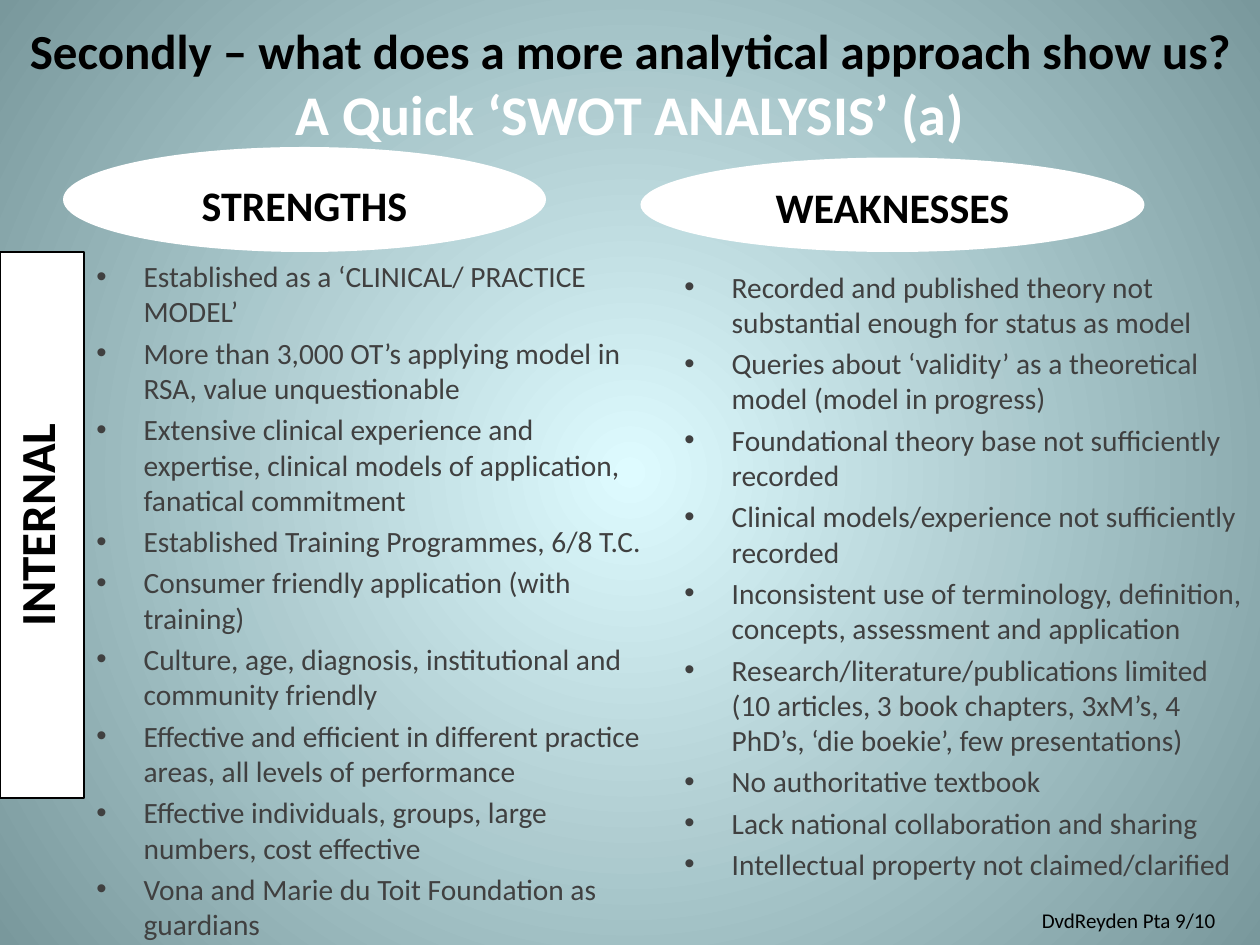
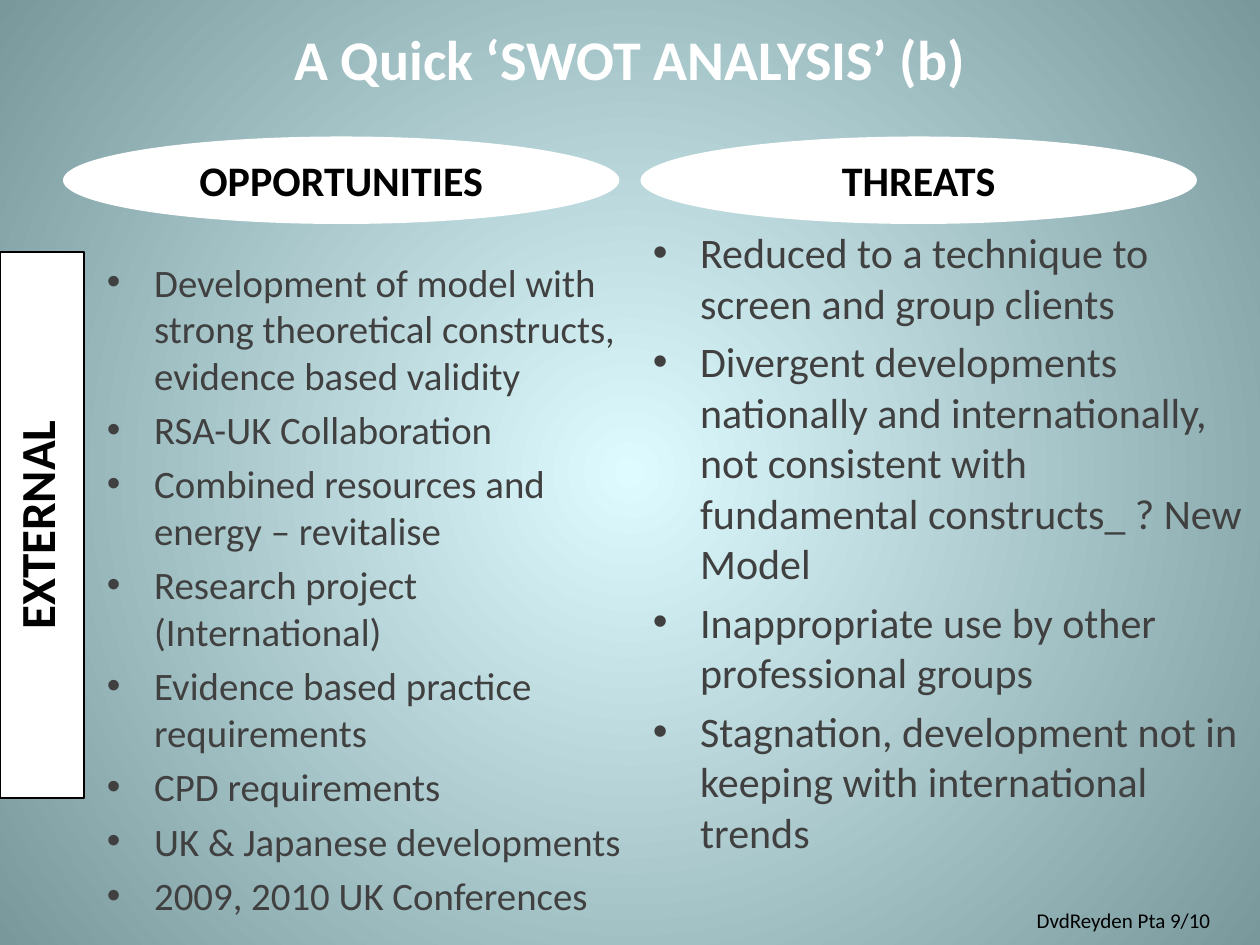
"""Build two SWOT analysis slides: internal and external factors."""
from dataclasses import dataclass

from pptx import Presentation
from pptx.dml.color import RGBColor
from pptx.enum.shapes import MSO_SHAPE
from pptx.enum.text import MSO_ANCHOR, PP_ALIGN
from pptx.oxml import parse_xml
from pptx.oxml.ns import nsdecls
from pptx.util import Pt

COLORS = {
    "glow": "DEFBFF",
    "edge": "79989C",
    "white": "FFFFFF",
    "black": "000000",
    "body": "404040",
}
FONT = "Calibri"
INDENT = 27


@dataclass
class Box:
    left: float
    top: float
    width: float
    height: float

    def lengths(self) -> tuple:
        return Pt(self.left), Pt(self.top), Pt(self.width), Pt(self.height)


@dataclass
class Line:
    text: str
    size: float
    color: str


@dataclass
class Factor:
    heading: str
    oval: Box
    box: Box
    size: float
    points: list[str]


@dataclass
class SwotSlide:
    title: list[Line]
    title_box: Box
    side_label: str
    footer_box: Box
    factors: list[Factor]


SIDE_BOX = Box(0, 144, 48, 312)
FOOTER = Line("DvdReyden Pta 9/10", 12, "black")

SLIDES = [
    SwotSlide(
        [Line("Secondly – what does a more analytical approach show us?", 28, "black"),
         Line("A Quick ‘SWOT ANALYSIS’ (a)", 32, "white")],
        Box(0, 0, 720, 96),
        "INTERNAL",
        Box(570, 511, 150, 29),
        [
            Factor("STRENGTHS", Box(36, 84, 276, 60), Box(48, 144, 330, 396), 16.8, [
                "Established as a ‘CLINICAL/ PRACTICE MODEL’",
                "More than 3,000 OT’s applying model in RSA, value unquestionable",
                "Extensive clinical experience and expertise, clinical models of "
                "application, fanatical commitment",
                "Established Training Programmes, 6/8 T.C.",
                "Consumer friendly application (with training)",
                "Culture, age, diagnosis, institutional and community friendly",
                "Effective and efficient in different practice areas, all levels of performance",
                "Effective individuals, groups, large numbers, cost effective",
                "Vona and Marie du Toit Foundation as guardians",
            ]),
            Factor("WEAKNESSES", Box(366, 90, 288, 54), Box(384, 150, 336, 390), 16.8, [
                "Recorded and published theory not substantial enough for status as model",
                "Queries about ‘validity’ as a theoretical model (model in progress)",
                "Foundational theory base not sufficiently recorded",
                "Clinical models/experience not sufficiently recorded",
                "Inconsistent use of terminology, definition, concepts, assessment and application",
                "Research/literature/publications limited (10 articles, 3 book chapters, "
                "3xM’s, 4 PhD’s, ‘die boekie’, few presentations)",
                "No authoritative textbook",
                "Lack national collaboration and sharing",
                "Intellectual property not claimed/clarified",
            ]),
        ],
    ),
    SwotSlide(
        [Line("A Quick ‘SWOT ANALYSIS’ (b)", 32, "white")],
        Box(36, 0, 648, 66),
        "EXTERNAL",
        Box(564, 511, 156, 29),
        [
            Factor("OPPORTUNITIES", Box(36, 78, 318, 50), Box(54, 144, 312, 384), 22.2, [
                "Development of model with strong theoretical constructs, evidence based validity",
                "RSA-UK Collaboration",
                "Combined resources and energy – revitalise",
                "Research project (International)",
                "Evidence based practice requirements",
                "CPD requirements",
                "UK & Japanese developments",
                "2009, 2010 UK Conferences",
            ]),
            Factor("THREATS", Box(366, 78, 318, 50), Box(366, 126, 354, 402), 24, [
                "Reduced to a technique to screen and group clients",
                "Divergent developments nationally and internationally, not consistent "
                "with fundamental constructs_ ? New Model",
                "Inappropriate use by other professional groups",
                "Stagnation, development not in keeping with international trends",
            ]),
        ],
    ),
]


def set_background(s) -> None:
    """Give the slide a radial gradient that glows in the centre."""
    s.background.fill.solid()
    bg_pr = s.background.fill._xPr
    grad = parse_xml(
        f'<a:gradFill {nsdecls("a")} rotWithShape="1"><a:gsLst>'
        f'<a:gs pos="0"><a:srgbClr val="{COLORS["glow"]}"/></a:gs>'
        f'<a:gs pos="100000"><a:srgbClr val="{COLORS["edge"]}"/></a:gs></a:gsLst>'
        '<a:path path="circle"><a:fillToRect l="50000" t="50000" r="50000" b="50000"/>'
        '</a:path></a:gradFill>')
    bg_pr.replace(bg_pr[0], grad)


def format_run(r, size: float, color: str, bold: bool) -> None:
    """Set the font of one run."""
    r.font.name = FONT
    r.font.size = Pt(size)
    r.font.bold = bold
    r.font.color.rgb = RGBColor.from_string(COLORS[color])


def write_centered(sp, lines: list[Line], anchor: MSO_ANCHOR, bold: bool = True) -> None:
    """Write centred lines into a shape as one paragraph."""
    tf = sp.text_frame
    tf.word_wrap = True
    tf.vertical_anchor = anchor
    p = tf.paragraphs[0]
    p.text = "\v".join(line.text for line in lines)
    p.alignment = PP_ALIGN.CENTER
    for r, line in zip(p.runs, lines):
        format_run(r, line.size, line.color, bold)


def add_text(s, box: Box, lines: list[Line], bold: bool = True) -> None:
    """Add a text box of centred lines."""
    write_centered(s.shapes.add_textbox(*box.lengths()), lines, MSO_ANCHOR.MIDDLE, bold)


def add_panel(s, kind: MSO_SHAPE, box: Box, line: Line, anchor: MSO_ANCHOR):
    """Add a white shape with a bold label and no outline."""
    sp = s.shapes.add_shape(kind, *box.lengths())
    sp.shadow.inherit = False
    sp.fill.solid()
    sp.fill.fore_color.rgb = RGBColor.from_string(COLORS["white"])
    sp.line.fill.background()
    write_centered(sp, [line], anchor)
    return sp


def add_side_label(s, text: str) -> None:
    """Add the outlined label that reads upwards along the left edge."""
    sp = add_panel(s, MSO_SHAPE.RECTANGLE, SIDE_BOX, Line(text, 28, "black"), MSO_ANCHOR.TOP)
    sp.line.color.rgb = RGBColor.from_string(COLORS["black"])
    sp.line.width = Pt(0.75)
    sp.text_frame._txBody.bodyPr.set("vert", "vert270")


def add_bullets(s, factor: Factor) -> None:
    """Add the bulleted points of one factor."""
    tf = s.shapes.add_textbox(*factor.box.lengths()).text_frame
    tf.word_wrap = True
    tf.text = "\n".join(factor.points)
    for p in tf.paragraphs:
        p.space_before = Pt(round(factor.size * 0.2, 1))
        p_pr = p._p.get_or_add_pPr()
        p_pr.set("marL", str(Pt(INDENT)))
        p_pr.set("indent", str(-Pt(INDENT)))
        p_pr.append(parse_xml(f'<a:buFont {nsdecls("a")} typeface="Arial"/>'))
        p_pr.append(parse_xml(f'<a:buChar {nsdecls("a")} char="•"/>'))
        format_run(p.runs[0], factor.size, "body", False)


def add_swot_slide(prs, content: SwotSlide) -> None:
    """Add one slide with its title, two factors, side label and footer."""
    s = prs.slides.add_slide(prs.slide_layouts[6])
    set_background(s)
    add_text(s, content.title_box, content.title)
    for factor in content.factors:
        heading = Line(factor.heading, 24, "black")
        add_panel(s, MSO_SHAPE.OVAL, factor.oval, heading, MSO_ANCHOR.BOTTOM)
        add_bullets(s, factor)
    add_side_label(s, content.side_label)
    add_text(s, content.footer_box, [FOOTER], bold=False)


def main() -> None:
    """Build and save the presentation."""
    prs = Presentation()
    prs.slide_width, prs.slide_height = Pt(720), Pt(540)
    for content in SLIDES:
        add_swot_slide(prs, content)
    prs.save("out.pptx")


if __name__ == "__main__":
    main()
